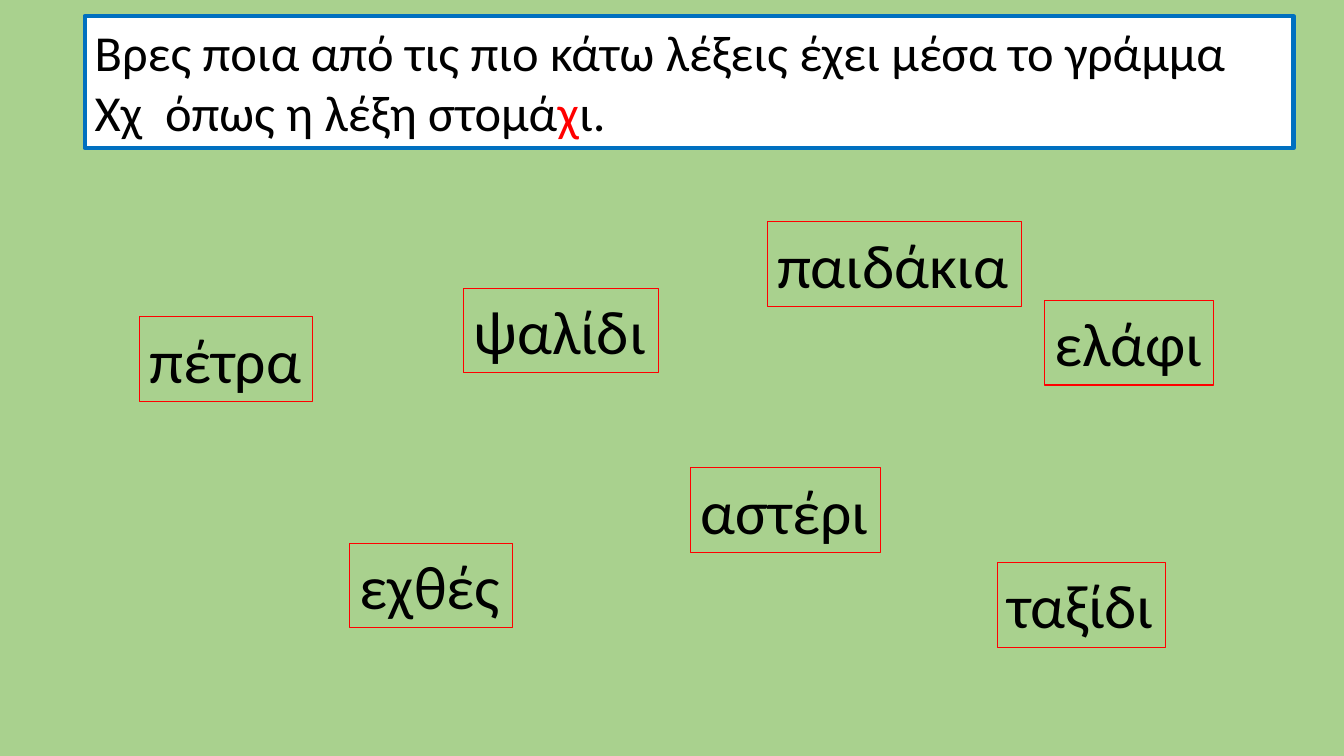
"""Build a Greek word-search exercise slide: find the word with the letter chi."""
from dataclasses import dataclass

from pptx import Presentation
from pptx.dml.color import RGBColor
from pptx.enum.text import MSO_AUTO_SIZE
from pptx.util import Emu, Pt

PX = 9144
FONT = "Calibri"
GROW = MSO_AUTO_SIZE.SHAPE_TO_FIT_TEXT
COLOURS = {
    "background": "A9D18E",
    "paper": "FFFFFF",
    "ink": "000000",
    "red": "FF0000",
    "blue": "0070C0",
}


@dataclass(frozen=True)
class Span:
    text: str
    colour: str = "ink"


@dataclass(frozen=True)
class TextFrame:
    left: int
    top: int
    width: int
    spans: tuple[Span, ...]
    height: int = 84
    size: int = 44
    border: str = "red"
    border_width: float = 0.75
    fill: str | None = None
    wrap: bool = False


def word(text: str, left: int, top: int, width: int) -> TextFrame:
    return TextFrame(left, top, width, (Span(text),))


WORDS = (
    word("πέτρα", 138, 314, 172),
    word("αστέρι", 685, 464, 188),
    word("ελάφι", 1036, 298, 168),
    word("ψαλίδι", 460, 286, 193),
    word("εχθές", 347, 539, 161),
    word("ταξίδι", 989, 558, 167),
    word("παιδάκια", 761, 220, 252),
)
QUESTION = TextFrame(
    84, 16, 1199,
    (
        Span("Βρες ποια από τις πιο κάτω λέξεις έχει μέσα το γράμμα Χχ  όπως η λέξη στομά"),
        Span("χ", "red"),
        Span("ι."),
    ),
    height=131, size=36, border="blue", border_width=3, fill="paper", wrap=True,
)


def rgb(name: str) -> RGBColor:
    return RGBColor.from_string(COLOURS[name])


def draw_frame(page, frame: TextFrame) -> None:
    box = page.shapes.add_textbox(
        *(Emu(px * PX) for px in (frame.left, frame.top, frame.width, frame.height))
    )
    box.line.color.rgb = rgb(frame.border)
    box.line.width = Pt(frame.border_width)
    if frame.fill:
        box.fill.solid()
        box.fill.fore_color.rgb = rgb(frame.fill)
    box.text_frame.word_wrap = frame.wrap
    box.text_frame.auto_size = GROW
    para = box.text_frame.paragraphs[0]
    for span in frame.spans:
        run = para.add_run()
        run.text = span.text
        run.font.name = FONT
        run.font.size = Pt(frame.size)
        run.font.color.rgb = rgb(span.colour)


def main() -> None:
    deck = Presentation()
    deck.slide_width = Emu(1333 * PX)
    deck.slide_height = Emu(750 * PX)
    page = deck.slides.add_slide(deck.slide_layouts[6])
    page.background.fill.solid()
    page.background.fill.fore_color.rgb = rgb("background")
    for frame in (*WORDS, QUESTION):
        draw_frame(page, frame)
    deck.save("out.pptx")


if __name__ == "__main__":
    main()
